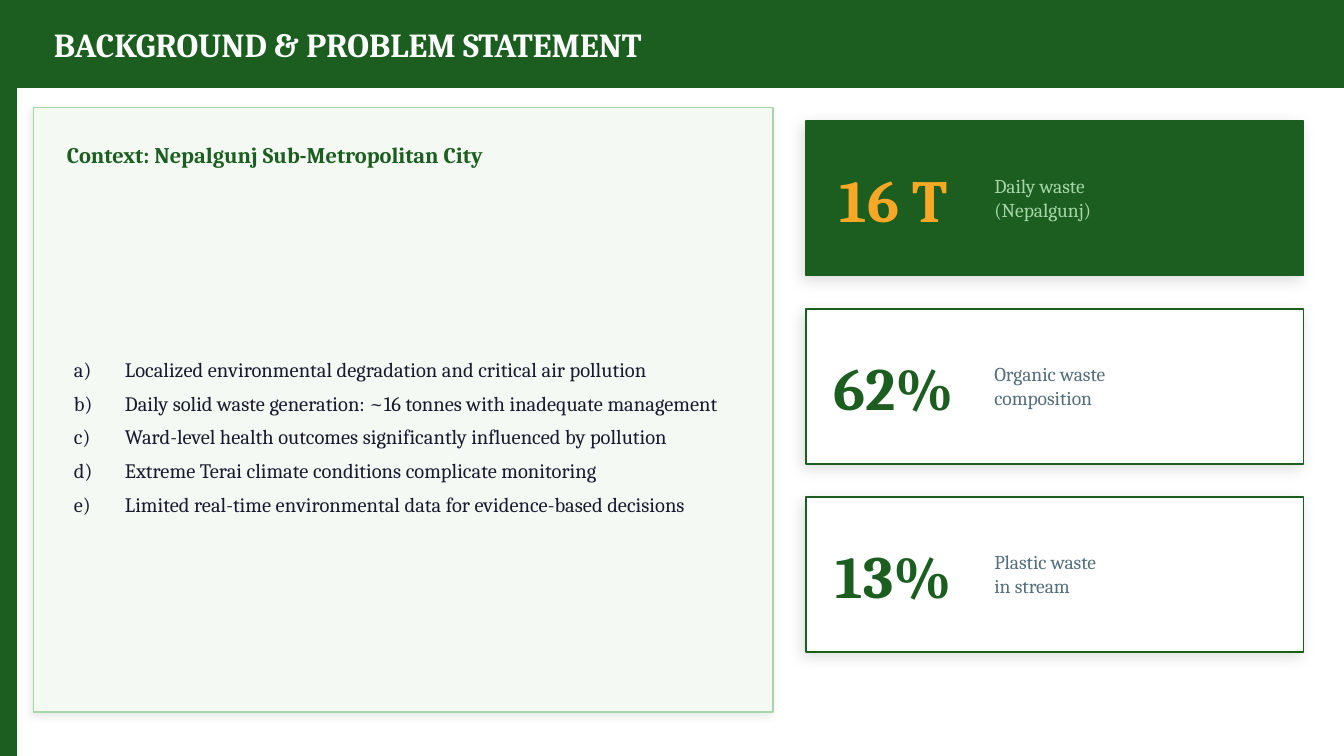
"""Build the background and problem statement slide."""
import pptx
import pptx.dml.color
import pptx.enum.shapes
import pptx.enum.text
import pptx.oxml
import pptx.oxml.ns
import pptx.util

Inches, Pt = pptx.util.Inches, pptx.util.Pt
RGB = pptx.dml.color.RGBColor.from_string
ALIGN = pptx.enum.text.PP_ALIGN
NS = pptx.oxml.ns.nsdecls("a")
HEX = {"green": "1B5E20", "mint": "A5D6A7", "pale": "F4F9F4", "white": "FFFFFF",
       "amber": "F9A825", "ink": "1A1A2E", "slate": "546E7A"}

wide = 10
high = wide * 9 / 16
deck = pptx.Presentation()
deck.slide_width, deck.slide_height = Inches(wide), Inches(high)
slide = deck.slides.add_slide(deck.slide_layouts[1])
shapes = slide.shapes
title, body = slide.placeholders


def add_box(place, fill, line, shade=None):
    """Draw a rectangle; shade holds opacity percent, blur and distance."""
    box = shapes.add_shape(pptx.enum.shapes.MSO_SHAPE.RECTANGLE, *map(Inches, place))
    box.fill.solid()
    box.fill.fore_color.rgb = RGB(HEX[fill])
    box.line.color.rgb = RGB(HEX[line])
    box.line.width = Pt(1)
    box.shadow.inherit = False
    if shade:
        alpha, blur, dist = shade
        glow = pptx.oxml.parse_xml(
            f'<a:outerShdw {NS} blurRad="{Pt(blur)}" dist="{Pt(dist)}" dir="8100000" '
            f'algn="bl" rotWithShape="0"><a:srgbClr val="000000">'
            f'<a:alpha val="{alpha * 1000}"/></a:srgbClr></a:outerShdw>')
        box.element.spPr.find(pptx.oxml.ns.qn("a:effectLst")).append(glow)


def add_text(place, text, size, color, bold=False, align=ALIGN.LEFT, holder=None, list_gap=None):
    """Write lines into a placeholder or new text box, lettered if list_gap is set."""
    box = holder or shapes.add_textbox(0, 0, 0, 0)
    box.left, box.top, box.width, box.height = map(Inches, place)
    box.element.getparent().append(box.element)
    frame = box.text_frame
    frame.text = text
    frame.word_wrap = True
    frame.auto_size = pptx.enum.text.MSO_AUTO_SIZE.NONE
    frame.vertical_anchor = pptx.enum.text.MSO_ANCHOR.MIDDLE
    for para in frame.paragraphs:
        para.alignment = align
        para.space_before = Pt(0)
        if list_gap:
            para.space_after = Pt(list_gap)
            props = para._p.get_or_add_pPr()
            props.set("marL", str(Inches(0.38)))
            props.set("indent", str(-Inches(0.38)))
            props.append(pptx.oxml.parse_xml(f'<a:buAutoNum {NS} type="alphaLcParenR"/>'))
        para.font.name = "Cambria"
        para.font.size = Pt(size)
        para.font.bold = bold
        para.font.color.rgb = RGB(HEX[color])


add_box((0, 0, 0.12, high), "green", "green")
add_box((0, 0, wide, 0.65), "green", "green")
add_text((0.3, 0.1, 9.4, 0.45), "BACKGROUND & PROBLEM STATEMENT", 18, "white", True, holder=title)

add_box((0.25, 0.8, 5.5, 4.5), "pale", "mint", (8, 4, 2))
add_text((0.4, 0.95, 5.2, 0.4), "Context: Nepalgunj Sub-Metropolitan City", 12, "green", True)
points = [
    "Localized environmental degradation and critical air pollution",
    "Daily solid waste generation: ~16 tonnes with inadequate management",
    "Ward-level health outcomes significantly influenced by pollution",
    "Extreme Terai climate conditions complicate monitoring",
    "Limited real-time environmental data for evidence-based decisions",
]
add_text((0.45, 1.45, 5.1, 3.6), "\n".join(points), 11, "ink", holder=body, list_gap=5)

cards = [
    ("16 T", "Daily waste\n(Nepalgunj)", "green", "amber", "mint"),
    ("62%", "Organic waste\ncomposition", "white", "green", "slate"),
    ("13%", "Plastic waste\nin stream", "white", "green", "slate"),
]
for row, (value, label, fill, tint, tone) in enumerate(cards):
    top = 0.9 + 1.4 * row
    add_box((6, top, 3.7, 1.15), fill, "green", (12, 8, 3))
    add_text((6.05, top + 0.05, 1.2, 1.05), value, 32, tint, True, ALIGN.CENTER)
    add_text((7.3, top + 0.22, 2.3, 0.7), label, 10.5, tone)

deck.save("out.pptx")
